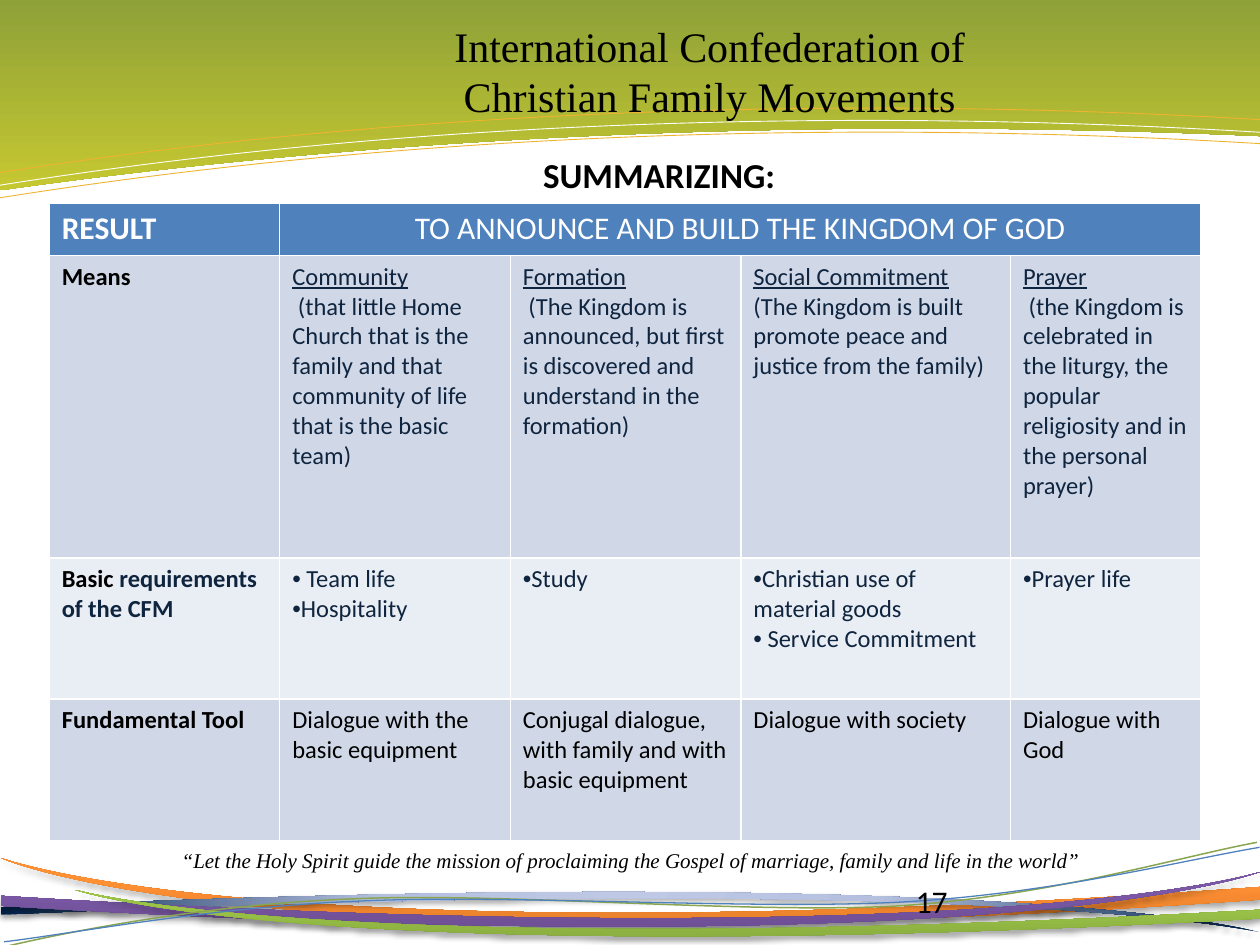
"""Build the slide that summarizes the means, requirements and tools of the movement."""
from pptx import Presentation
from pptx.dml.color import RGBColor
from pptx.enum.text import MSO_ANCHOR, PP_ALIGN
from pptx.oxml import parse_xml
from pptx.oxml.ns import nsdecls, qn
from pptx.util import Inches, Pt

CENTER, LEFT, TOP = PP_ALIGN.CENTER, PP_ALIGN.LEFT, MSO_ANCHOR.TOP
BLACK, WHITE, NAVY = "000000", "FFFFFF", "0F243E"
SERIF, SANS = "Times New Roman", "Calibri"
colour = RGBColor.from_string


def trace(shapes, points, closed=False):
    """Draw a chain of cubic curves through a start and triples of points."""
    outline = [(Inches(x), Inches(y)) for x, y in points]
    builder = shapes.build_freeform(*outline[0])
    builder.add_line_segments(outline[1:], close=closed)
    shape = builder.convert_to_shape()
    shape.shadow.inherit = False
    segments = list(shape._element.iter(qn("a:lnTo")))
    for first in range(0, len(points) - 1, 3):
        curve = parse_xml(f'<a:cubicBezTo {nsdecls("a")}/>')
        segments[first].addprevious(curve)
        for segment in segments[first:first + 3]:
            curve.append(segment[0])
            segment.getparent().remove(segment)
    return shape


def write(frame, paragraphs, base, align=LEFT, bullet=None):
    """Fill a text frame with paragraphs of (text, format) runs."""
    for index, runs in enumerate(paragraphs):
        paragraph = frame.paragraphs[0] if index == 0 else frame.add_paragraph()
        paragraph.alignment = align
        if bullet:
            properties = paragraph._p.get_or_add_pPr()
            properties.set("marL", "0")
            properties.set("indent", "0")
            properties.append(parse_xml(f'<a:buFont {nsdecls("a")} typeface="Arial"/>'))
            properties.append(parse_xml(f'<a:buChar {nsdecls("a")} char="{bullet}"/>'))
        for text, changes in runs:
            run = paragraph.add_run()
            run.text = text
            values = {"bold": False, **base, **changes}
            run.font.color.rgb = colour(values.pop("ink"))
            for name, value in values.items():
                setattr(run.font, name, value)


deck = Presentation()
deck.slide_width, deck.slide_height = Inches(10), Inches(7.5)
slide = deck.slides.add_slide(deck.slide_layouts[5])
shapes = slide.shapes

DOWN, UP = '<a:lin ang="5400000" scaled="0"/>', '<a:lin ang="16200000" scaled="0"/>'
AROUND = '<a:path path="circle"><a:fillToRect l="50000" t="-80000" r="50000" b="180000"/></a:path>'
bands = [
    ([(0, -0.01), (0, 1.51), (0, 1.51), (0, 1.51), (3.73, 0.98), (7.3, 0.96), (10, 1.08),
      (10, -0.01), (10, -0.01), (10, -0.01)],
     [(0, "8EA138"), (100, "C6C831")], DOWN, False),
    ([(10, 7.04), (2.12, 7.61), (0.01, 6.81), (0.01, 6.81), (0.01, 6.81), (1.92, 7.71),
      (10, 7.14), (10, 7.14), (10, 7.12), (10, 7.04)],
     [(0, "CC6E20"), (80, "FF9034"), (100, "FF9136")], UP, True),
    ([(0.01, 7.26), (7.9, 6.9), (10, 7.4), (10, 7.4), (10, 7.4), (8.09, 6.84),
      (0.01, 7.2), (0.01, 7.2), (0.01, 7.21), (0.01, 7.26)],
     [(0, "BFC9E5"), (40, "B5C0E0"), (100, "00234D")], AROUND, True),
    ([(0.01, 7.11), (7.9, 7.6), (10, 6.92), (10, 6.92), (10, 6.92), (8.09, 7.68),
      (0.01, 7.19), (0.01, 7.19), (0.01, 7.18), (0.01, 7.11)],
     [(0, "5F4480"), (80, "7B58A6"), (100, "7C57A8")], UP, True),
    ([(10, 7.22), (2.57, 7.64), (0.59, 7.06), (0.59, 7.06), (0.59, 7.06), (2.38, 7.71),
      (10, 7.29), (10, 7.29), (10, 7.28), (10, 7.22)],
     [(0, "779737"), (80, "9BC348"), (100, "9DC746")], UP, True),
]
for points, stops, direction, shadowed in bands:
    band = trace(shapes, points, closed=True)
    band.fill.background()
    band.line.fill.background()
    stop_list = "".join(f'<a:gs pos="{share * 1000}"><a:srgbClr val="{tone}"/></a:gs>'
                        for share, tone in stops)
    properties = band._element.spPr
    properties.replace(properties.find(qn("a:noFill")), parse_xml(
        f'<a:gradFill {nsdecls("a")} rotWithShape="1"><a:gsLst>{stop_list}</a:gsLst>'
        f'{direction}</a:gradFill>'))
    if shadowed:
        properties.find(qn("a:effectLst")).append(parse_xml(
            f'<a:outerShdw {nsdecls("a")} blurRad="{Pt(3.1)}" dist="{Pt(1.8)}" dir="5400000">'
            f'<a:srgbClr val="{BLACK}"><a:alpha val="35000"/></a:srgbClr></a:outerShdw>'))

strands = [
    ([(10, 0.95), (7.5, 0.8), (3.84, 0.77), (0, 1.37)], "EFB32F", 0.5, 0),
    ([(0, 1.47), (3.84, 0.86), (7.5, 0.9), (10, 1.05)], "FFFFFE", 0.5, 0),
    ([(0, 1.57), (3.84, 0.96), (7.49, 0.99), (10, 1.14)], "EFB32F", 0.5, 0),
    ([(0.02, 7.28), (0.5, 7.19), (1.61, 7.02), (2.79, 7.03), (3.98, 7.03), (5.92, 7.3),
      (7.12, 7.29), (8.33, 7.27), (9.4, 7), (9.99, 6.92)], "89A54F", 0.85, 357.3),
    ([(0.02, 7.24), (0.49, 7.21), (1.67, 7.04), (2.86, 7.05), (4.05, 7.05), (5.97, 7.27),
      (7.17, 7.26), (8.36, 7.25), (9.42, 7.03), (10.01, 6.96)], "4F81BD", 0.75, 357.3),
]
for points, tone, weight, turn in strands:
    strand = trace(shapes, points)
    strand.rotation = turn
    strand.fill.background()
    strand.line.color.rgb = colour(tone)
    strand.line.width = Pt(weight)

title = shapes.title
title.left, title.top, title.width, title.height = map(Inches, (4.21, 1.17, 2.27, 0.44))
title.text_frame.vertical_anchor = TOP
title.text_frame.word_wrap = True
write(title.text_frame, [[("SUMMARIZING:", {})]],
      {"size": Pt(20), "name": SANS, "ink": BLACK, "bold": True})

captions = [
    ((3.49, 0.11, 4.37, 0.91), ["International Confederation of ", "Christian Family Movements "],
     {"size": Pt(24), "name": SERIF}, CENTER, False),
    ((0.94, 6.68, 8.14, 0.3),
     ["“Let the Holy Spirit guide the mission of proclaiming the Gospel of marriage, "
      "family and life in the world”"],
     {"size": Pt(12), "name": SERIF, "italic": True}, CENTER, True),
    ((7.17, 6.95, 2.33, 0.4), ["17"], {"size": Pt(18), "name": SANS}, LEFT, True),
]
for place, lines, style, align, wraps in captions:
    caption = shapes.add_textbox(*map(Inches, place)).text_frame
    caption.word_wrap = wraps
    write(caption, [[(line, {})] for line in lines], {"ink": BLACK, **style}, align)

STRONG, LINKED = {"bold": True, "ink": BLACK}, {"underline": True}
STRONG_NAVY = {"bold": True, "ink": NAVY}
rows = [
    (0.42, "4F81BD", WHITE, 18, None, [
        [[("RESULT", {"bold": True})]],
        [[("TO ANNOUNCE AND BUILD THE KINGDOM OF GOD", {})]]]),
    (2.4, "D0D8E8", NAVY, 14, None, [
        [[("Means", STRONG)]],
        [[("Community", LINKED)],
         [(" (that little Home Church that is the family and that community of life "
           "that is the basic team)", {})]],
        [[("Formation", LINKED)],
         [(" (The Kingdom is announced, but first is discovered and understand "
           "in the formation)", {})]],
        [[("Social Commitment ", LINKED),
          ("(The Kingdom is built promote peace and justice from the family)", {})]],
        [[("Prayer", LINKED)],
         [(" (the Kingdom is celebrated in the liturgy, the popular religiosity "
           "and in the personal prayer)", {})]]]),
    (1.12, "E9EDF4", NAVY, 14, "•", [
        [[("Basic ", STRONG), ("requirements of the CFM", STRONG_NAVY)]],
        [[(" Team life", {})], [("Hospitality", {})]],
        [[("Study", {})]],
        [[("Christian use of material goods", {})], [(" Service Commitment", {})]],
        [[("Prayer life", {})]]]),
    (1.12, "D0D8E8", BLACK, 14, None, [
        [[("Fundamental Tool", STRONG)]],
        [[("Dialogue with the basic equipment", {})]],
        [[("Conjugal dialogue, with family and with basic equipment", {})]],
        [[("Dialogue with society", {})]],
        [[("Dialogue with God", {})]]]),
]
column_widths = [1.83, 1.83, 1.83, 2.14, 1.51]
table = shapes.add_table(len(rows), len(column_widths),
                         *map(Inches, (0.39, 1.61, 9.14, 5.06))).table
for column, width in zip(table.columns, column_widths):
    column.width = Inches(width)
table.cell(0, 1).merge(table.cell(0, 4))
for r, (height, fill, ink, size, bullet, contents) in enumerate(rows):
    table.rows[r].height = Inches(height)
    for cell in table.rows[r].cells:
        for side in "LRTB":
            cell._tc.get_or_add_tcPr().append(parse_xml(
                f'<a:ln{side} {nsdecls("a")} w="{Pt(1)}"><a:solidFill>'
                f'<a:srgbClr val="{WHITE}"/></a:solidFill></a:ln{side}>'))
        cell.fill.solid()
        cell.fill.fore_color.rgb = colour(fill)
    for c, paragraphs in enumerate(contents):
        write(table.cell(r, c).text_frame, paragraphs,
              {"size": Pt(size), "name": SANS, "ink": ink},
              CENTER if r == 0 and c else LEFT, bullet if c else None)

deck.save("out.pptx")
